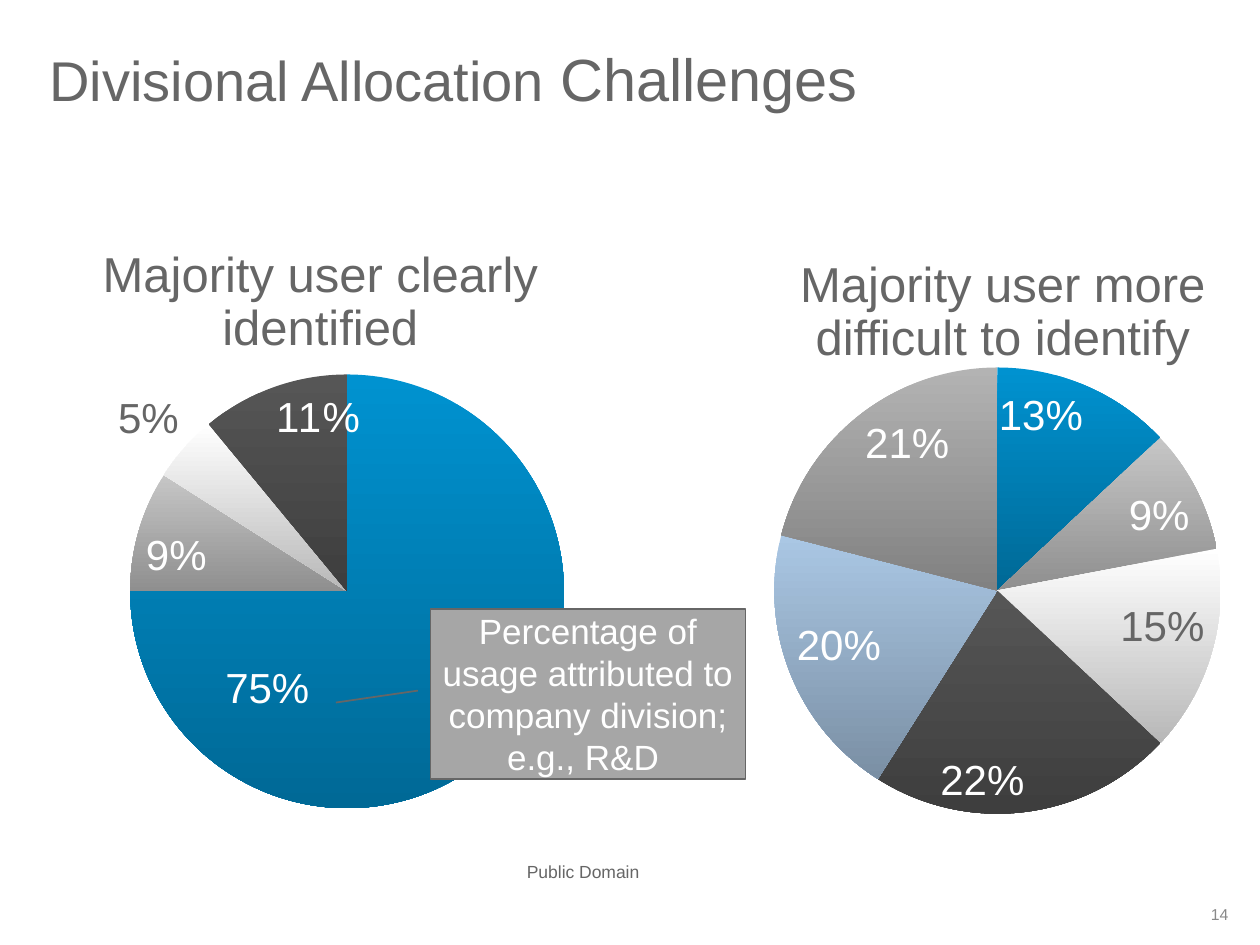
from lxml import etree
from pptx import Presentation
from pptx.chart.data import CategoryChartData
from pptx.dml.color import RGBColor
from pptx.enum.chart import XL_CHART_TYPE, XL_LABEL_POSITION
from pptx.enum.shapes import MSO_SHAPE
from pptx.enum.text import MSO_ANCHOR, PP_ALIGN
from pptx.oxml.ns import qn
from pptx.util import Inches, Pt

PIE = XL_CHART_TYPE.PIE
INSIDE, OUTSIDE = XL_LABEL_POSITION.INSIDE_END, XL_LABEL_POSITION.OUTSIDE_END
CALLOUT = MSO_SHAPE.LINE_CALLOUT_1
LEFT, CENTER, RIGHT = PP_ALIGN.LEFT, PP_ALIGN.CENTER, PP_ALIGN.RIGHT
TOP, MIDDLE = MSO_ANCHOR.TOP, MSO_ANCHOR.MIDDLE

FONT = "Arial"
GRAY = RGBColor(0x66, 0x66, 0x66)
PALE_GRAY = RGBColor(0x89, 0x89, 0x89)
BOX_GRAY = RGBColor(0xA6, 0xA6, 0xA6)
WHITE = RGBColor(0xFF, 0xFF, 0xFF)
SLICES = [
    RGBColor(0x00, 0x92, 0xD0),
    RGBColor(0xC6, 0xC6, 0xC6),
    WHITE,
    RGBColor(0x56, 0x56, 0x56),
    RGBColor(0xAA, 0xC7, 0xE4),
    RGBColor(0xB3, 0xB3, 0xB3),
]
SHADE = 0.72
UNITS_PER_INCH = 12


def grid(*units):
    return [Inches(u / UNITS_PER_INCH) for u in units]


def darker(color):
    return RGBColor(*(round(c * SHADE) for c in color))


def set_font(font, size, color):
    font.name, font.size = FONT, Pt(size)
    font.color.rgb = color


def write(tf, *texts, sizes, color=GRAY, align=LEFT, anchor=TOP,
          spacing=None, inset=0, wrap=True):
    tf.word_wrap = wrap
    tf.vertical_anchor = anchor
    tf.margin_left = tf.margin_right = Inches(inset)
    tf.margin_top = tf.margin_bottom = Inches(inset / 2)
    p = tf.paragraphs[0]
    p.alignment = align
    p.line_spacing = spacing
    for text, size in zip(texts, sizes):
        r = p.add_run()
        r.text = text
        set_font(r.font, size, color)


def add_text(s, box, *texts, **fmt):
    write(s.shapes.add_textbox(*grid(*box)).text_frame, *texts, **fmt)


def manual_layout(**values):
    layout = etree.Element(qn("c:layout"))
    manual = etree.SubElement(layout, qn("c:manualLayout"))
    for tag, value in values.items():
        etree.SubElement(manual, qn(f"c:{tag}")).set("val", str(value))
    return layout


def place_plot(chart, x, y, w, h):
    area = chart.element.find(".//" + qn("c:plotArea"))
    for old in area.findall(qn("c:layout")):
        area.remove(old)
    area.insert(0, manual_layout(layoutTarget="inner", xMode="edge",
                                 yMode="edge", x=x, y=y, w=w, h=h))


def move_label(series, index, dx, dy):
    for label in series.points[index].data_label, :
        label.position = INSIDE
        set_font(label.font, 24, WHITE)
    for item in series.data_labels.element.findall(qn("c:dLbl")) if hasattr(
            series.data_labels, "element") else chart_labels(series):
        if item.find(qn("c:idx")).get("val") == str(index):
            item.insert(1, manual_layout(x=dx, y=dy))


def chart_labels(series):
    return series.points[0].data_label.font and series._element.findall(
        ".//" + qn("c:dLbl"))


def add_pie(s, box, plot, values, gray_label, position):
    data = CategoryChartData(number_format="0%")
    data.categories = [str(i + 1) for i in range(len(values))]
    data.add_series("Series 1", values)
    chart = s.shapes.add_chart(PIE, *grid(*box), data).chart
    chart.has_title = chart.has_legend = False
    set_font(chart.font, 18, GRAY)
    place_plot(chart, *plot)
    chart.plots[0].vary_by_categories = True
    series = chart.plots[0].series[0]
    for i, color in enumerate(SLICES[:len(values)]):
        fill = series.points[i].format.fill
        fill.gradient()
        fill.gradient_angle = 270
        for stop, shade in zip(fill.gradient_stops, (color, darker(color))):
            stop.color.rgb = shade
        series.points[i].format.line.fill.background()
    labels = series.data_labels
    labels.show_value = True
    labels.number_format, labels.number_format_is_linked = "0%", False
    labels.position = INSIDE
    set_font(labels.font, 24, WHITE)
    label = series.points[gray_label].data_label
    set_font(label.font, 24, GRAY)
    label.position = position
    return series


def add_callout(s, box, text, adjustments):
    sp = s.shapes.add_shape(CALLOUT, *grid(*box))
    sp.shadow.inherit = False
    sp.fill.solid()
    sp.fill.fore_color.rgb = BOX_GRAY
    sp.line.color.rgb = GRAY
    sp.line.width = Pt(1)
    for i, value in enumerate(adjustments):
        sp.adjustments[i] = value
    write(sp.text_frame, text, sizes=[20], color=WHITE, align=CENTER)


def main():
    prs = Presentation()
    prs.slide_width, prs.slide_height = grid(120, 90)
    s = prs.slides.add_slide(prs.slide_layouts[6])
    heading = dict(sizes=[28], align=CENTER, spacing=0.9)

    add_text(s, (49, 81.4, 13.2, 3.2), "Public Domain", sizes=[10],
             inset=0.1, wrap=False)
    add_text(s, (4.7, 4.8, 112.3, 9.2), "Divisional Allocation ",
             "Challenges", sizes=[32, 34], spacing=0.9)
    add_text(s, (110.8, 85.9, 6.2, 2.4), "14", sizes=[9], color=PALE_GRAY,
             align=RIGHT, anchor=MIDDLE)

    clear = add_pie(s, (5, 27, 61, 51), (0.12, 0.17, 0.68, 0.81),
                    (0.75, 0.09, 0.05, 0.11), 2, OUTSIDE)
    move_label(clear, 0, -0.29, -0.05)
    add_text(s, (5, 23.8, 51, 10), "Majority user clearly identified",
             **heading)
    add_pie(s, (67, 34, 50, 50), (0.12, 0.02, 0.88, 0.85),
            (0.13, 0.09, 0.15, 0.22, 0.2, 0.21), 2, INSIDE)
    add_text(s, (70, 24.8, 51, 10),
             "Majority user more difficult to identify", **heading)
    add_callout(s, (41, 58, 30, 16.2),
                "Percentage of usage attributed to company division; "
                "e.g., R&D ", (0.48, -0.04, 0.55, -0.3))
    prs.save("out.pptx")


if __name__ == "__main__":
    main()
